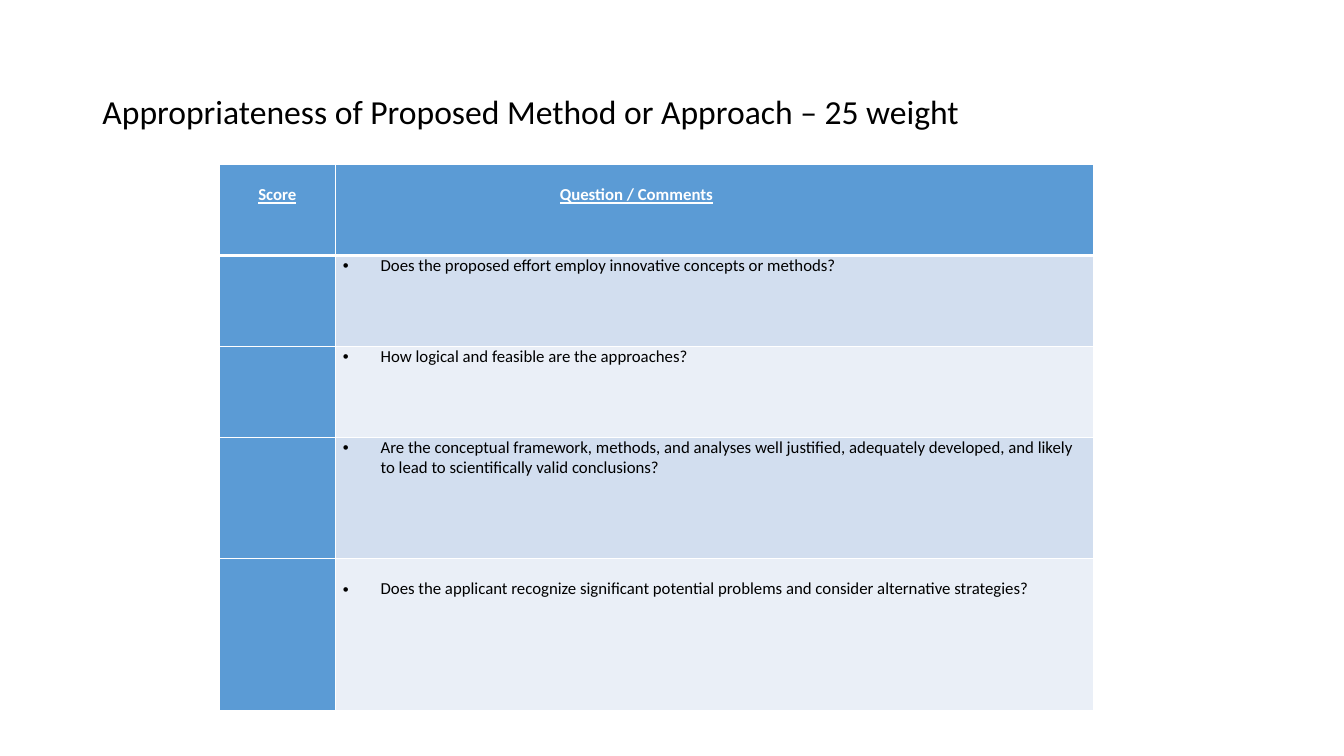
from lxml.etree import SubElement
from pptx import Presentation
from pptx.dml.color import RGBColor
from pptx.enum.text import MSO_ANCHOR, PP_ALIGN
from pptx.oxml.ns import qn
from pptx.util import Pt

BLUE, PALE, PALER, WHITE, BLACK = "5B9BD5", "D2DEEF", "EAEFF7", "FFFFFF", "000000"
COLUMN_WIDTHS = [83.5, 541.5]
ROW_HEIGHTS = [65, 65, 65, 86.5, 108.5]
LINE = 14.7  # height of one line of 12 pt text
QUESTIONS = [
    ("Does the proposed effort employ innovative concepts or methods?", 0),
    ("How logical and feasible are the approaches?", 0),
    ("Are the conceptual framework, methods, and analyses well justified, "
     "adequately developed, and likely to lead to scientifically valid conclusions?", 0),
    ("Does the applicant recognize significant potential problems and consider "
     "alternative strategies?", LINE),
]


def color(hex_string):
    return RGBColor.from_string(hex_string)


def style_run(run, size, hex_string, bold=False, underline=False):
    run.font.name = "Calibri"
    run.font.size = Pt(size)
    run.font.color.rgb = color(hex_string)
    run.font.bold = bold
    run.font.underline = underline


def add_borders(cell, top, bottom):
    properties = cell._tc.get_or_add_tcPr()
    for side, width in (("lnL", 1), ("lnR", 1), ("lnT", top), ("lnB", bottom)):
        border = SubElement(properties, qn(f"a:{side}"), w=str(Pt(width)))
        fill = SubElement(border, qn("a:solidFill"))
        SubElement(fill, qn("a:srgbClr"), val=WHITE)


def format_cell(cell, fill, row):
    add_borders(cell, 3 if row == 1 else 1, 3 if row == 0 else 1)
    cell.fill.solid()
    cell.fill.fore_color.rgb = color(fill)
    cell.margin_left = cell.margin_right = Pt(5)
    cell.margin_top = cell.margin_bottom = 0


def write_cell(cell, text, hex_string, top=0, heading=False):
    cell.margin_top = Pt(top)
    cell.text_frame.text = text
    paragraph = cell.text_frame.paragraphs[0]
    style_run(paragraph.runs[0], 12, hex_string, heading, heading)
    return paragraph


def add_bullet(paragraph, indent):
    properties = paragraph._p.get_or_add_pPr()
    properties.set("marL", str(Pt(indent)))
    properties.set("indent", str(-Pt(indent)))
    SubElement(properties, qn("a:buFont"), typeface="Arial")
    SubElement(properties, qn("a:buChar"), char="•")


def place_title(slide, left, top, width, height):
    title = slide.shapes.title
    title.left, title.top, title.width, title.height = map(Pt, (left, top, width, height))
    title.text_frame.text = "Appropriateness of Proposed Method or Approach – 25 weight"
    title.text_frame.vertical_anchor = MSO_ANCHOR.MIDDLE
    heading = title.text_frame.paragraphs[0]
    heading.alignment = PP_ALIGN.LEFT
    heading.line_spacing = 0.9
    style_run(heading.runs[0], 24, BLACK)


def add_score_table(slide, left, top):
    table = slide.shapes.add_table(
        len(ROW_HEIGHTS), len(COLUMN_WIDTHS), Pt(left), Pt(top),
        Pt(sum(COLUMN_WIDTHS)), Pt(sum(ROW_HEIGHTS))).table
    for column, width in zip(table.columns, COLUMN_WIDTHS):
        column.width = Pt(width)
    for row, height in zip(table.rows, ROW_HEIGHTS):
        row.height = Pt(height)

    # Fills: blue header and score column, alternating question rows
    for row in range(len(ROW_HEIGHTS)):
        question_fill = BLUE if row == 0 else (PALER, PALE)[row % 2]
        for column, fill in enumerate((BLUE, question_fill)):
            format_cell(table.cell(row, column), fill, row)

    # Header row
    score = write_cell(table.cell(0, 0), "Score", WHITE, LINE, heading=True)
    score.alignment = PP_ALIGN.CENTER
    comments = table.cell(0, 1)
    write_cell(comments, "Question / Comments", WHITE, LINE, heading=True)
    comments.margin_left = Pt(160)

    # Questions
    for row, (question, offset) in enumerate(QUESTIONS, start=1):
        add_bullet(write_cell(table.cell(row, 1), question, BLACK, offset), 27)


def main():
    presentation = Presentation()
    presentation.slide_width, presentation.slide_height = Pt(960), Pt(540)
    slide = presentation.slides.add_slide(presentation.slide_layouts[5])
    place_title(slide, 66, 29, 828, 104.4)
    add_score_table(slide, 156.4, 117.4)
    presentation.save("out.pptx")


if __name__ == "__main__":
    main()
